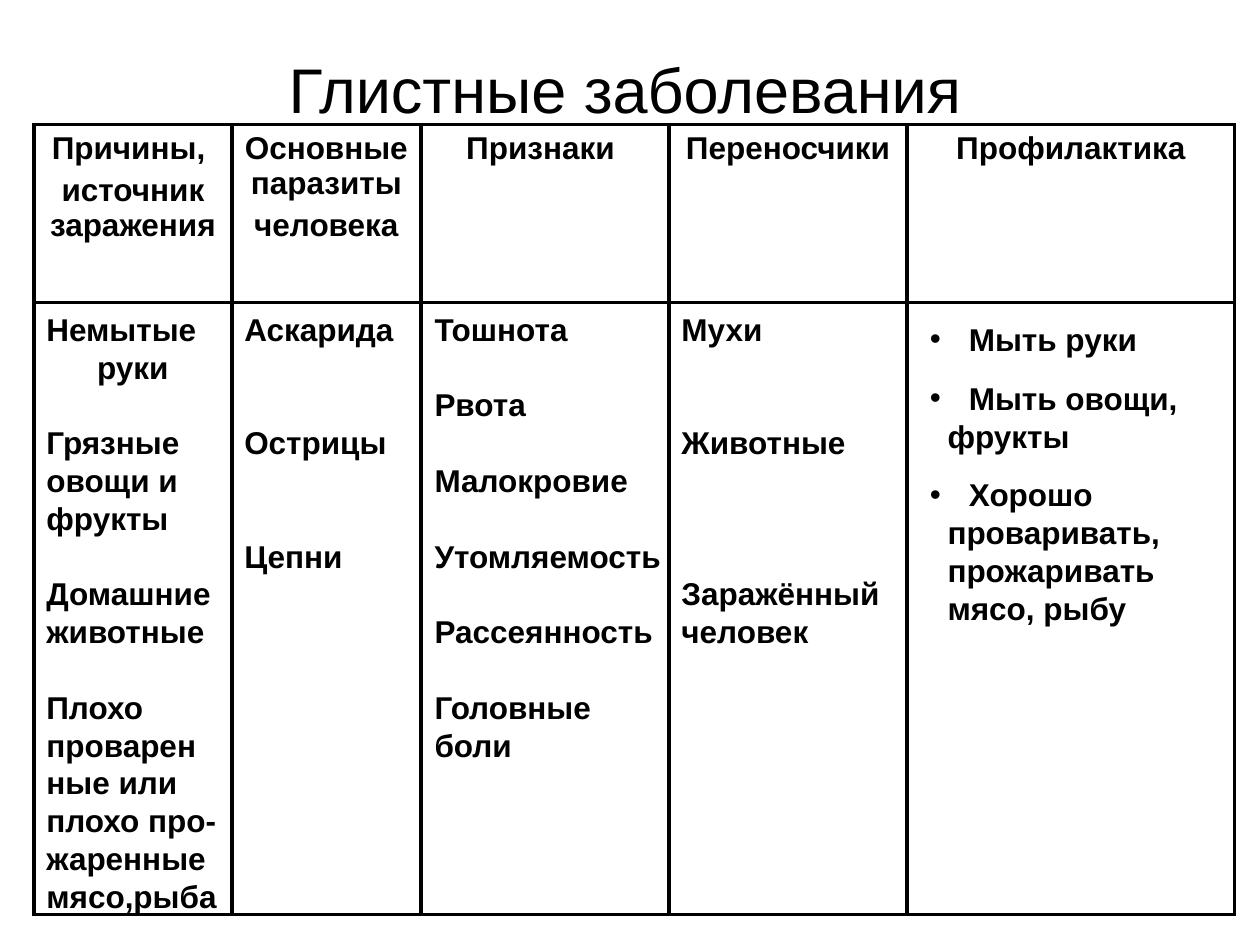
"""Build a slide with a table of helminth diseases: causes, parasites, signs, carriers, prevention."""
from dataclasses import dataclass

import pptx
import pptx.dml.color
import pptx.enum.text
import pptx.oxml
import pptx.oxml.ns
import pptx.util
from pptx.util import Inches

BLACK = pptx.dml.color.RGBColor(0, 0, 0)
FONT = "Arial"
BODY_SIZE = 18
LINE_PITCH = 21.6
BORDER_WIDTH = 2.25
LEFT = pptx.enum.text.PP_ALIGN.LEFT
CENTER = pptx.enum.text.PP_ALIGN.CENTER

TABLE_LEFT, TABLE_TOP = 0.27, 0.99
COLUMN_WIDTHS = [1.57, 1.5, 1.97, 1.89, 2.6]
ROW_HEIGHTS = [1.41, 4.86]
HEADERS = [
    "Причины, \nисточник заражения",
    "Основные паразиты\nчеловека",
    "Признаки ",
    "Переносчики ",
    "Профилактика",
]


@dataclass
class Entry:
    text: str
    empty_lines: int = 0
    alignment: pptx.enum.text.PP_ALIGN = LEFT


@dataclass
class Column:
    left: float
    width: float
    height: float
    entries: list[Entry]


@dataclass
class Advice:
    text: str
    bulleted: bool = False
    gap: int = 0


COLUMNS = [
    Column(0.27, 1.57, 4.91, [
        Entry("Немытые"),
        Entry("руки", alignment=CENTER),
        Entry("Грязные овощи и фрукты", 1),
        Entry("Домашние животные", 1),
        Entry("Плохо проварен", 1),
        Entry("ные или плохо про-жаренные мясо,рыба"),
    ]),
    Column(1.84, 1.58, 2.2, [Entry("Аскарида"), Entry("Острицы", 2), Entry("Цепни", 2)]),
    Column(3.35, 2.05, 4.01, [
        Entry("Тошнота"),
        Entry("Рвота", 1),
        Entry("Малокровие", 1),
        Entry("Утомляемость", 1),
        Entry("Рассеянность", 1),
        Entry("Головные", 1),
        Entry("боли"),
    ]),
    Column(5.31, 1.89, 3.1, [
        Entry("Мухи"),
        Entry("Животные", 2),
        Entry("Заражённый человек", 3),
    ]),
]
PREVENTION = [
    Advice("Мыть руки", True),
    Advice("Мыть овощи,", True, 12),
    Advice("фрукты"),
    Advice("Хорошо", True, 12),
    Advice("проваривать,"),
    Advice("прожаривать"),
    Advice("мясо, рыбу"),
]


def format_runs(paragraph, size: float, bold: bool) -> None:
    for run in paragraph.runs:
        run.font.name = FONT
        run.font.size = pptx.util.Pt(size)
        run.font.bold = bold
        run.font.color.rgb = BLACK


def place(shape, left: float, top: float, width: float, height: float) -> None:
    shape.left, shape.top = Inches(left), Inches(top)
    shape.width, shape.height = Inches(width), Inches(height)
    frame = shape.text_frame
    frame.word_wrap = True
    frame.auto_size = pptx.enum.text.MSO_AUTO_SIZE.NONE
    frame.vertical_anchor = pptx.enum.text.MSO_ANCHOR.TOP


def set_borders(cell) -> None:
    properties = cell._tc.get_or_add_tcPr()
    for position, side in enumerate(("lnL", "lnR", "lnT", "lnB")):
        line = pptx.oxml.parse_xml(
            f'<a:{side} {pptx.oxml.ns.nsdecls("a")} w="{pptx.util.Pt(BORDER_WIDTH)}">'
            f'<a:solidFill><a:srgbClr val="{BLACK}"/></a:solidFill></a:{side}>'
        )
        properties.insert(position, line)


def set_bullet(paragraph, bulleted: bool) -> None:
    properties = paragraph._p.get_or_add_pPr()
    margin = Inches(0.31 if bulleted else 0.14)
    properties.set("marL", str(margin))
    properties.set("indent", str(-margin if bulleted else 0))
    namespace = pptx.oxml.ns.nsdecls("a")
    bullet = f'<a:buChar {namespace} char="•"/>' if bulleted else f"<a:buNone {namespace}/>"
    properties.append(pptx.oxml.parse_xml(bullet))


def add_title(slide) -> None:
    title = slide.shapes.title
    place(title, 1.96, 0.35, 6, 0.68)
    title.text_frame.text = "Глистные заболевания"
    paragraph = title.text_frame.paragraphs[0]
    paragraph.alignment = CENTER
    format_runs(paragraph, 36, False)


def add_grid(slide) -> None:
    frame = slide.shapes.add_table(
        len(ROW_HEIGHTS), len(COLUMN_WIDTHS), Inches(TABLE_LEFT), Inches(TABLE_TOP),
        Inches(sum(COLUMN_WIDTHS)), Inches(sum(ROW_HEIGHTS)),
    )
    table = frame.table
    table.first_row = table.horz_banding = False
    for column, width in zip(table.columns, COLUMN_WIDTHS):
        column.width = Inches(width)
    for row, height in zip(table.rows, ROW_HEIGHTS):
        row.height = Inches(height)
    for cell in table.iter_cells():
        cell.fill.background()
        set_borders(cell)
    for index, header in enumerate(HEADERS):
        frame = table.cell(0, index).text_frame
        frame.text = header
        for position, paragraph in enumerate(frame.paragraphs):
            paragraph.alignment = CENTER
            paragraph.space_before = pptx.util.Pt(3.6 if position else 0)
            format_runs(paragraph, BODY_SIZE, True)


def add_column(slide, column: Column) -> None:
    box = slide.shapes.add_textbox(0, 0, 0, 0)
    place(box, column.left, 2.41, column.width, column.height)
    box.text_frame.text = "\n".join(entry.text for entry in column.entries)
    for paragraph, entry in zip(box.text_frame.paragraphs, column.entries):
        paragraph.alignment = entry.alignment
        paragraph.line_spacing = pptx.util.Pt(LINE_PITCH)
        paragraph.space_before = pptx.util.Pt(LINE_PITCH * entry.empty_lines)
        format_runs(paragraph, BODY_SIZE, True)


def fill_prevention(slide) -> None:
    body = slide.placeholders[1]
    place(body, 7.28, 2.49, 2.44, 2.54)
    body.text_frame.text = "\n".join(advice.text for advice in PREVENTION)
    for paragraph, advice in zip(body.text_frame.paragraphs, PREVENTION):
        paragraph.alignment = LEFT
        paragraph.line_spacing = pptx.util.Pt(LINE_PITCH)
        paragraph.space_before = pptx.util.Pt(advice.gap)
        set_bullet(paragraph, advice.bulleted)
        format_runs(paragraph, BODY_SIZE, True)


def main() -> None:
    presentation = pptx.Presentation()
    presentation.slide_width, presentation.slide_height = Inches(10), Inches(7.5)
    slide = presentation.slides.add_slide(presentation.slide_layouts[1])
    add_title(slide)
    add_grid(slide)
    for column in COLUMNS:
        add_column(slide, column)
    fill_prevention(slide)
    presentation.save("out.pptx")


if __name__ == "__main__":
    main()
